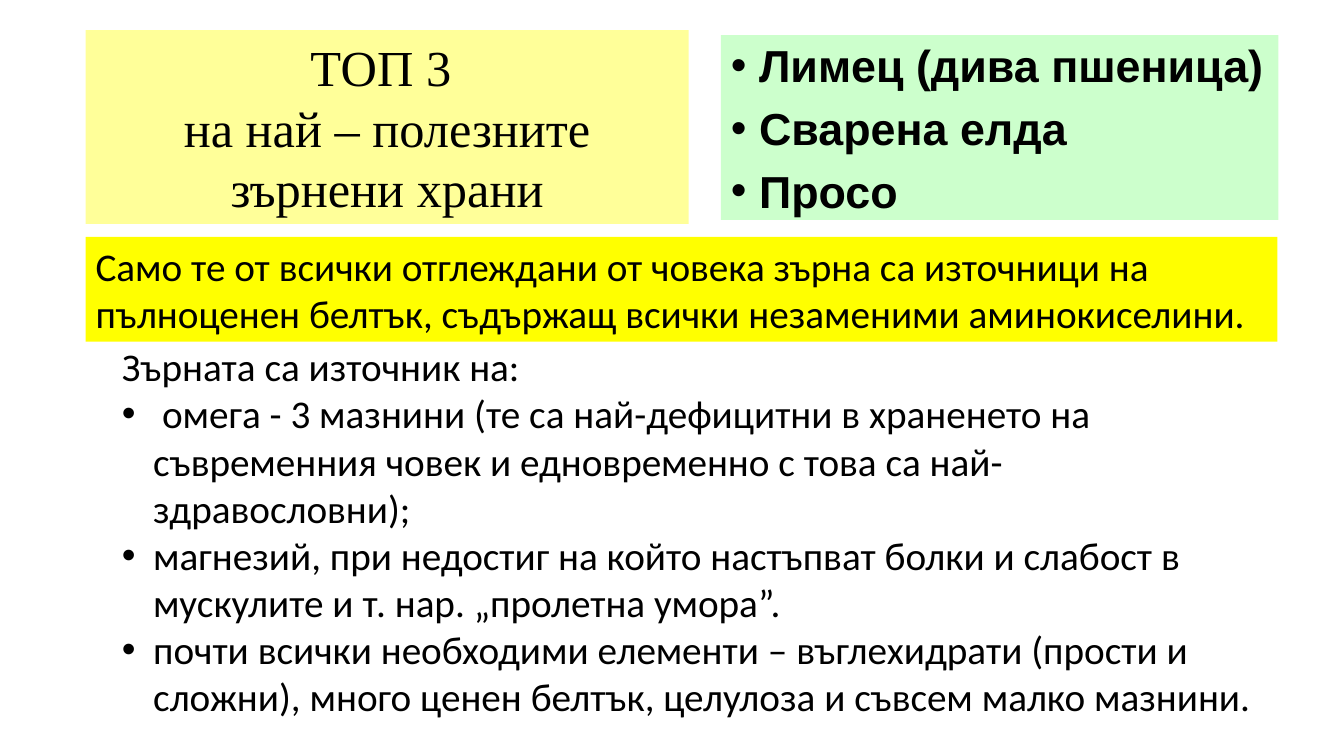
from dataclasses import dataclass
from typing import Optional

from lxml import etree
from pptx import Presentation
from pptx import util as u
from pptx.dml.color import RGBColor
from pptx.enum import text as t
from pptx.oxml import ns

BLACK = RGBColor(0x00, 0x00, 0x00)
GREEN = RGBColor(0xCC, 0xFF, 0xCC)
CREAM = RGBColor(0xFF, 0xFF, 0x99)
YELLOW = RGBColor(0xFF, 0xFF, 0x00)


@dataclass
class Panel:
    left: float
    top: float
    width: float
    height: float
    fill: Optional[RGBColor] = None
    middle: bool = False
    wrap: bool = True


def place(shape, panel: Panel):
    shape.left, shape.top = u.Inches(panel.left), u.Inches(panel.top)
    shape.width, shape.height = u.Inches(panel.width), u.Inches(panel.height)
    if panel.fill is not None:
        shape.fill.solid()
        shape.fill.fore_color.rgb = panel.fill
    frame = shape.text_frame
    frame.word_wrap = panel.wrap
    frame.auto_size = t.MSO_AUTO_SIZE.SHAPE_TO_FIT_TEXT
    frame.vertical_anchor = t.MSO_ANCHOR.MIDDLE if panel.middle else t.MSO_ANCHOR.TOP
    return frame


def write(frame, words: str, *, font: str = "Calibri", size: float = 28,
          bold: bool = False, align=t.PP_ALIGN.LEFT, before: float = 0,
          bullet: bool = False, hang: float = 0) -> None:
    para = frame.paragraphs[0] if not frame.text else frame.add_paragraph()
    para.alignment = align
    para.space_before = u.Pt(before)
    props = para._p.get_or_add_pPr()
    props.set("marL", str(u.Inches(hang)))
    props.set("indent", str(-u.Inches(hang)))
    if bullet:
        etree.SubElement(props, ns.qn("a:buFont")).set("typeface", "Arial")
        etree.SubElement(props, ns.qn("a:buChar")).set("char", "•")
    else:
        etree.SubElement(props, ns.qn("a:buNone"))
    run = para.add_run()
    run.text = words
    run.font.name = font
    run.font.size = u.Pt(size)
    run.font.bold = bold
    run.font.color.rgb = BLACK


def main() -> None:
    deck = Presentation()
    deck.slide_width, deck.slide_height = u.Inches(13.33), u.Inches(7.5)
    slide = deck.slides.add_slide(deck.slide_layouts[3])
    title, grains, gains = slide.placeholders

    head = place(title, Panel(0.85, 0.3, 5.98, 1.92, CREAM, middle=True))
    for line in ("ТОП 3 ", "на най – полезните зърнени храни"):
        write(head, line, font="Times New Roman", size=36, align=t.PP_ALIGN.CENTER)

    top = place(grains, Panel(7.15, 0.3, 5.53, 1.93, GREEN, middle=True, wrap=False))
    for grain in (" Лимец (дива пшеница)", " Сварена елда", " Просо"):
        write(top, grain, font="Arial", size=32, bold=True, before=6.4, bullet=True)

    body = place(gains, Panel(1.11, 3.35, 11.45, 3.87))
    write(body, "Зърната са източник на:")
    for gain in (
        " омега - 3 мазнини (те са най-дефицитни в храненето на съвременния "
        "човек и едновременно с това са най-здравословни);",
        "магнезий, при недостиг на който настъпват болки и слабост в мускулите "
        "и т. нар. „пролетна умора”.",
        "почти всички необходими елементи – въглехидрати (прости и сложни), "
        "много ценен белтък, целулоза и съвсем малко мазнини.",
    ):
        write(body, gain, bullet=True, hang=0.31)

    claim = place(slide.shapes.add_textbox(0, 0, 0, 0),
                  Panel(0.85, 2.35, 11.82, 1.04, YELLOW))
    write(claim, "Само те от всички отглеждани от човека зърна са източници на "
                 "пълноценен белтък, съдържащ всички незаменими аминокиселини.")

    deck.save("out.pptx")


if __name__ == "__main__":
    main()
